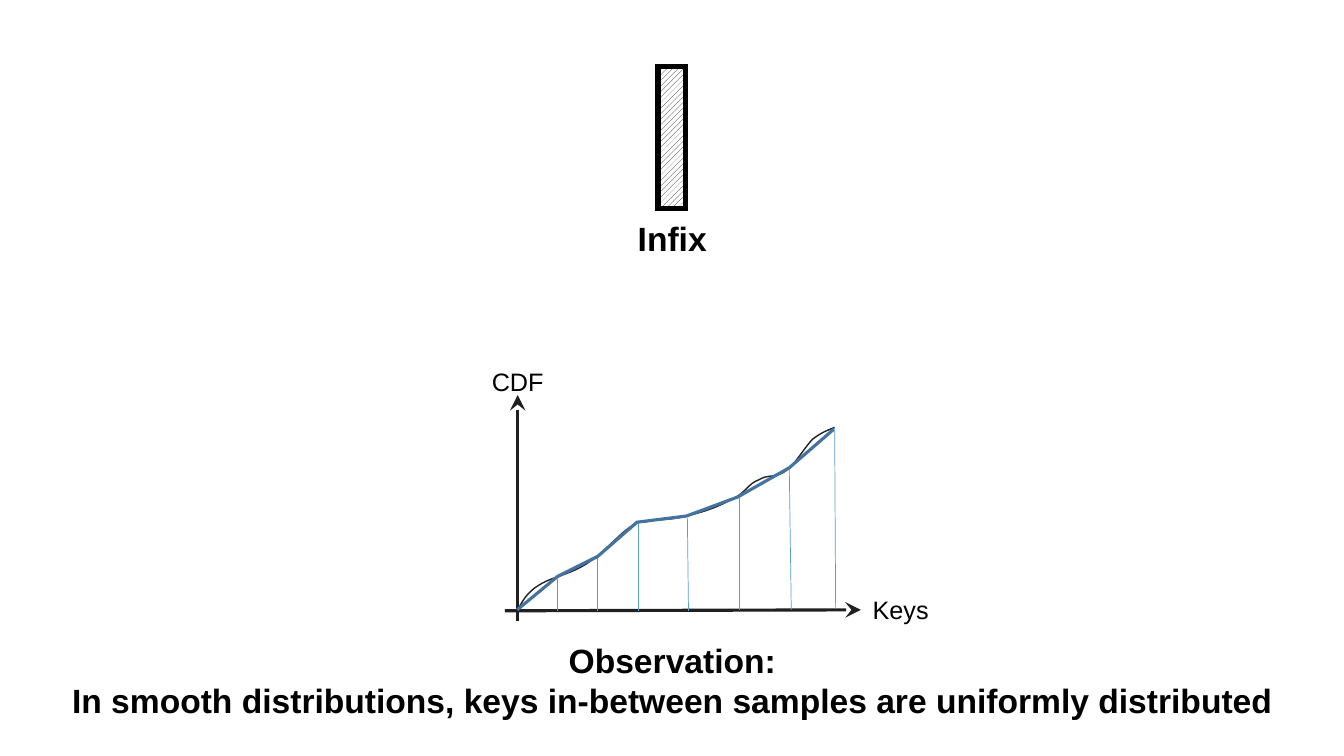
"""Build the infix slide with a piecewise linear model of a key distribution."""
from dataclasses import dataclass

import lxml.etree
import pptx
import pptx.dml.color
import pptx.enum.dml
import pptx.enum.shapes
import pptx.enum.text
import pptx.oxml.ns
import pptx.util

Pt = pptx.util.Pt
qn = pptx.oxml.ns.qn
Point = tuple[float, float]

INK = "202020"
BLACK = "000000"
WHITE = "FFFFFF"
MODEL_BLUE = "43739E"
SAMPLE_BLUE = "5B9BD5"
CURVE_STEPS = 10


@dataclass
class Label:
    lines: list[str]
    left: float
    top: float
    width: float
    height: float
    size: float = 18
    heading: bool = False


@dataclass
class Segment:
    start: Point
    end: Point
    color: str
    weight: float
    arrow: bool = False


LABELS = [
    Label(["Observation:",
           "In smooth distributions, keys in-between samples are uniformly distributed"],
          25.9, 453.6, 908.6, 65.5, 24, True),
    Label(["Keys"], 616.3, 421.2, 56, 28.8),
    Label(["CDF"], 344.2, 257.8, 54, 28.8),
    Label(["Infix"], 440.6, 151.9, 79.2, 36, 24, True),
]

AXES = [
    Segment((369.8, 443.5), (369.8, 282.2), INK, 2.25, True),
    Segment((360.7, 436.3), (614.9, 435.6), INK, 2.25, True),
]

SAMPLES = [
    Segment(top, bottom, SAMPLE_BLUE, 0.5)
    for top, bottom in [
        ((398.2, 413.3), (398.2, 436.3)),
        ((427, 396.7), (427, 436.3)),
        ((455.8, 372.2), (455.8, 436.3)),
        ((491, 370.1), (491.8, 436.3)),
        ((527.8, 355.7), (527.8, 435.6)),
        ((563.8, 334.8), (565.2, 435.6)),
        ((596.2, 305.3), (596.9, 434.9)),
    ]
]

MODEL = [(369.4, 435.6), (398.2, 411.8), (427, 397.4), (455, 373),
         (490.3, 368.6), (527, 355), (563.8, 334.1), (595.4, 306.7)]

CDF_START = (370.1, 434.9)
CDF_BEZIERS = [
    ((372.2, 432), (375.1, 424.1), (384.5, 418.3)),
    ((394.6, 411.8), (405.4, 411.1), (418.3, 403.2)),
    ((432, 394.6), (440.6, 383), (450, 376.6)),
    ((458.6, 370.8), (455, 374.4), (463.7, 372.2)),
    ((472.3, 370.8), (481.7, 371.5), (493.2, 367.9)),
    ((505.4, 365), (514.1, 361.4), (523.4, 356.4)),
    ((533.5, 351.4), (534.2, 345.6), (542.2, 342.7)),
    ((549.4, 338.4), (553.7, 342), (561.6, 336.2)),
    ((568.8, 330.5), (573.8, 321.1), (580.3, 313.9)),
    ((587.5, 308.2), (593.3, 306.7), (596.2, 305.3)),
]


def rgb(value: str) -> pptx.dml.color.RGBColor:
    """Turn a hex string into a colour."""
    return pptx.dml.color.RGBColor.from_string(value)


def set_line(shape, color: str, weight: float) -> None:
    """Give a shape a solid line."""
    shape.line.color.rgb = rgb(color)
    shape.line.width = Pt(weight)


def add_line_detail(shape, tag: str, **attributes: str) -> None:
    """Append a join or an arrowhead to a shape's line."""
    line = shape.element.spPr.find(qn("a:ln"))
    lxml.etree.SubElement(line, qn(tag), **attributes)


def add_label(page, label: Label) -> None:
    """Add a text box with one paragraph per line."""
    box = page.shapes.add_textbox(Pt(label.left), Pt(label.top),
                                  Pt(label.width), Pt(label.height))
    frame = box.text_frame
    frame.auto_size = pptx.enum.text.MSO_AUTO_SIZE.SHAPE_TO_FIT_TEXT
    frame.word_wrap = label.heading
    for index, line in enumerate(label.lines):
        para = frame.add_paragraph() if index else frame.paragraphs[0]
        if label.heading:
            para.alignment = pptx.enum.text.PP_ALIGN.CENTER
        span = para.add_run()
        span.text = line
        span.font.name = "Arial"
        span.font.size = Pt(label.size)
        span.font.bold = label.heading
        span.font.color.rgb = rgb(BLACK)


def add_segment(page, segment: Segment) -> None:
    """Add a straight line, with an arrowhead if wanted."""
    connector = page.shapes.add_connector(
        pptx.enum.shapes.MSO_CONNECTOR.STRAIGHT,
        *(Pt(value) for value in segment.start + segment.end))
    set_line(connector, segment.color, segment.weight)
    if segment.arrow:
        add_line_detail(connector, "a:tailEnd", type="stealth", w="lg", len="lg")
    lxml.etree.SubElement(connector.element.spPr, qn("a:effectLst"))


def add_curve(page, points: list[Point], color: str, weight: float) -> None:
    """Add an open, unfilled line through the points."""
    first, *rest = [(Pt(x), Pt(y)) for x, y in points]
    builder = page.shapes.build_freeform(*first)
    builder.add_line_segments(rest, close=False)
    shape = builder.convert_to_shape()
    shape.shadow.inherit = False
    shape.fill.background()
    set_line(shape, color, weight)


def sample_beziers(start: Point) -> list[Point]:
    """Return closely spaced points along the CDF."""
    points = [start]
    for first, second, end in CDF_BEZIERS:
        for step in range(1, CURVE_STEPS + 1):
            t = step / CURVE_STEPS
            u = 1 - t
            points.append(tuple(
                u**3 * a + 3 * u**2 * t * b + 3 * u * t**2 * c + t**3 * d
                for a, b, c, d in zip(start, first, second, end)))
        start = end
    return points


def add_infix_bar(page) -> None:
    """Add the hatched bar."""
    bar = page.shapes.add_shape(pptx.enum.shapes.MSO_SHAPE.RECTANGLE,
                                Pt(470.2), Pt(47.5), Pt(19.6), Pt(101.5))
    bar.shadow.inherit = False
    bar.fill.patterned()
    bar.fill.pattern = pptx.enum.dml.MSO_PATTERN.WIDE_UPWARD_DIAGONAL
    bar.fill.fore_color.rgb = rgb(INK)
    bar.fill.back_color.rgb = rgb(WHITE)
    set_line(bar, BLACK, 4)
    add_line_detail(bar, "a:miter", lim="800000")


def main() -> None:
    """Draw the slide and save it."""
    deck = pptx.Presentation()
    deck.slide_width, deck.slide_height = Pt(960), Pt(540)
    page = deck.slides.add_slide(deck.slide_layouts[6])
    for axis in AXES:
        add_segment(page, axis)
    add_curve(page, sample_beziers(CDF_START), INK, 1)
    add_infix_bar(page)
    for label in LABELS:
        add_label(page, label)
    for sample in SAMPLES:
        add_segment(page, sample)
    add_curve(page, MODEL, MODEL_BLUE, 2.25)
    deck.save("out.pptx")


if __name__ == "__main__":
    main()
